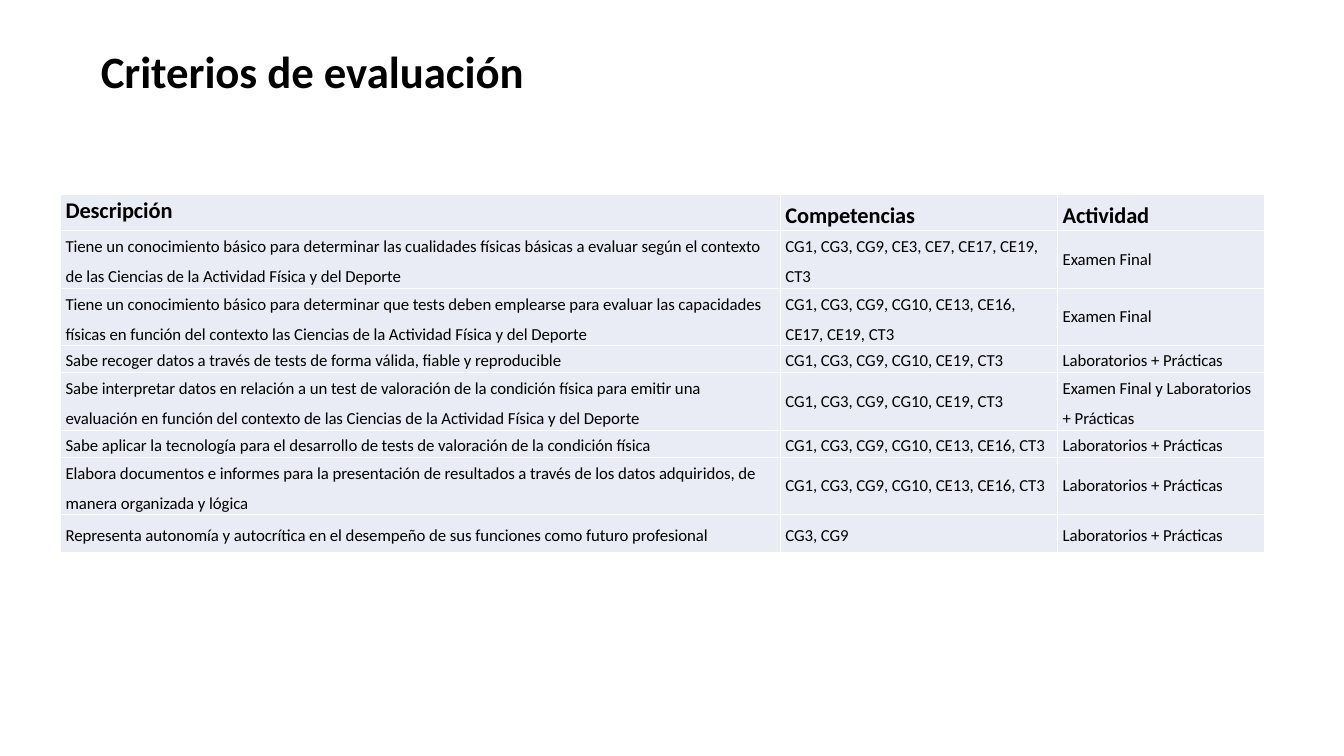
from lxml import etree
from pptx import Presentation
from pptx.dml.color import RGBColor
from pptx.enum.text import MSO_ANCHOR, MSO_AUTO_SIZE
from pptx.oxml.ns import qn
from pptx.util import Inches, Pt

TOP, MIDDLE = MSO_ANCHOR.TOP, MSO_ANCHOR.MIDDLE
GROW = MSO_AUTO_SIZE.SHAPE_TO_FIT_TEXT
BLACK = RGBColor(0x00, 0x00, 0x00)
WHITE = RGBColor(0xFF, 0xFF, 0xFF)
LAVENDER = RGBColor(0xE9, 0xEB, 0xF5)
FONT = "Calibri"
TRACKING = "-5"  # hundredths of a point

COLUMN_WIDTHS = [7.14, 2.75, 2.05]
ROW_HEIGHTS = [0.36, 0.57, 0.57, 0.27, 0.57, 0.27, 0.57, 0.37]
HEADINGS = ["Descripción", "Competencias", "Actividad"]
LABS = "Laboratorios + Prácticas"
CRITERIA = [
    ["Tiene un conocimiento básico para determinar las cualidades físicas básicas a evaluar según el contexto\n"
     "de las Ciencias de la Actividad Física y del Deporte",
     "CG1, CG3, CG9, CE3, CE7, CE17, CE19,\nCT3", "Examen Final"],
    ["Tiene un conocimiento básico para determinar que tests deben emplearse para evaluar las capacidades\n"
     "físicas en función del contexto las Ciencias de la Actividad Física y del Deporte",
     "CG1, CG3, CG9, CG10, CE13, CE16,\nCE17, CE19, CT3", "Examen Final"],
    ["Sabe recoger datos a través de tests de forma válida, fiable y reproducible",
     "CG1, CG3, CG9, CG10, CE19, CT3", LABS],
    ["Sabe interpretar datos en relación a un test de valoración de la condición física para emitir una\n"
     "evaluación en función del contexto de las Ciencias de la Actividad Física y del Deporte",
     "CG1, CG3, CG9, CG10, CE19, CT3", "Examen Final y Laboratorios\n+ Prácticas"],
    ["Sabe aplicar la tecnología para el desarrollo de tests de valoración de la condición física",
     "CG1, CG3, CG9, CG10, CE13, CE16, CT3", LABS],
    ["Elabora documentos e informes para la presentación de resultados a través de los datos adquiridos, de\n"
     "manera organizada y lógica",
     "CG1, CG3, CG9, CG10, CE13, CE16, CT3", LABS],
    ["Representa autonomía y autocrítica en el desempeño de sus funciones como futuro profesional",
     "CG3, CG9", LABS],
]


def write_text(frame, text, size, bold=False, indent=0.05, first_spacing=None, next_spacing=None):
    """Write one paragraph per line of text; spacings are exact line heights in points."""
    for index, line in enumerate(text.split("\n")):
        para = frame.add_paragraph() if index else frame.paragraphs[0]
        para._p.get_or_add_pPr().set("marL", str(Inches(indent)))
        spacing = next_spacing if index else first_spacing
        if spacing:
            para.line_spacing = Pt(spacing)
        if index:
            para.space_before = Pt(7.2)
        span = para.add_run()
        span.text = line
        span.font.name = FONT
        span.font.size = Pt(size)
        span.font.bold = bold
        span.font.color.rgb = BLACK
        span._r.get_or_add_rPr().set("spc", TRACKING)


def style_cell(cell, margin_top, anchor):
    cell.margin_left = cell.margin_right = cell.margin_bottom = 0
    cell.margin_top = Inches(margin_top)
    cell.vertical_anchor = anchor
    properties = cell._tc.get_or_add_tcPr()
    for side in ("a:lnL", "a:lnR", "a:lnT", "a:lnB"):
        border = etree.SubElement(properties, qn(side), w=str(Pt(1)))
        paint = etree.SubElement(border, qn("a:solidFill"))
        etree.SubElement(paint, qn("a:srgbClr"), val=str(WHITE))
    cell.fill.solid()
    cell.fill.fore_color.rgb = LAVENDER


def add_title(slide, left, top, width, height):
    box = slide.shapes.add_textbox(Inches(left), Inches(top), Inches(width), Inches(height))
    frame = box.text_frame
    frame.word_wrap = True
    frame.auto_size = GROW
    frame.margin_left = frame.margin_right = frame.margin_bottom = 0
    frame.margin_top = Inches(0.01)
    write_text(frame, "Criterios de evaluación", 32, bold=True, indent=0.01)


def fill_heading_row(table):
    for column, heading in enumerate(HEADINGS):
        cell = table.cell(0, column)
        style_cell(cell, 0.08 if column else 0.03, TOP)
        write_text(cell.text_frame, heading, 16, bold=True, first_spacing=19.1 if column else None)


def fill_criterion_row(table, row, texts):
    """Centre the short cells of a two-line row; start all others at the top."""
    two_lines = "\n" in texts[0]
    last = row == len(CRITERIA)
    for column, text in enumerate(texts):
        cell = table.cell(row, column)
        if two_lines and "\n" not in text:
            style_cell(cell, 0, MIDDLE)
        else:
            style_cell(cell, 0.11 if last else 0.06, TOP)
        write_text(cell.text_frame, text, 12, next_spacing=14.1,
                   first_spacing=None if two_lines or last else 14.1)


def add_criteria_table(slide, left, top):
    frame = slide.shapes.add_table(
        len(ROW_HEIGHTS), len(COLUMN_WIDTHS), Inches(left), Inches(top),
        Inches(sum(COLUMN_WIDTHS)), Inches(sum(ROW_HEIGHTS)))
    table = frame.table
    table.first_row = table.horz_banding = False
    for column, width in zip(table.columns, COLUMN_WIDTHS):
        column.width = Inches(width)
    for row, height in zip(table.rows, ROW_HEIGHTS):
        row.height = Inches(height)
    fill_heading_row(table)
    for row, texts in enumerate(CRITERIA, start=1):
        fill_criterion_row(table, row, texts)


def main():
    deck = Presentation()
    deck.slide_width, deck.slide_height = Inches(13.33), Inches(7.5)
    slide = deck.slides.add_slide(deck.slide_layouts[6])
    add_criteria_table(slide, 0.6, 1.93)
    add_title(slide, 0.99, 0.42, 4.24, 0.56)
    deck.save("out.pptx")


if __name__ == "__main__":
    main()
